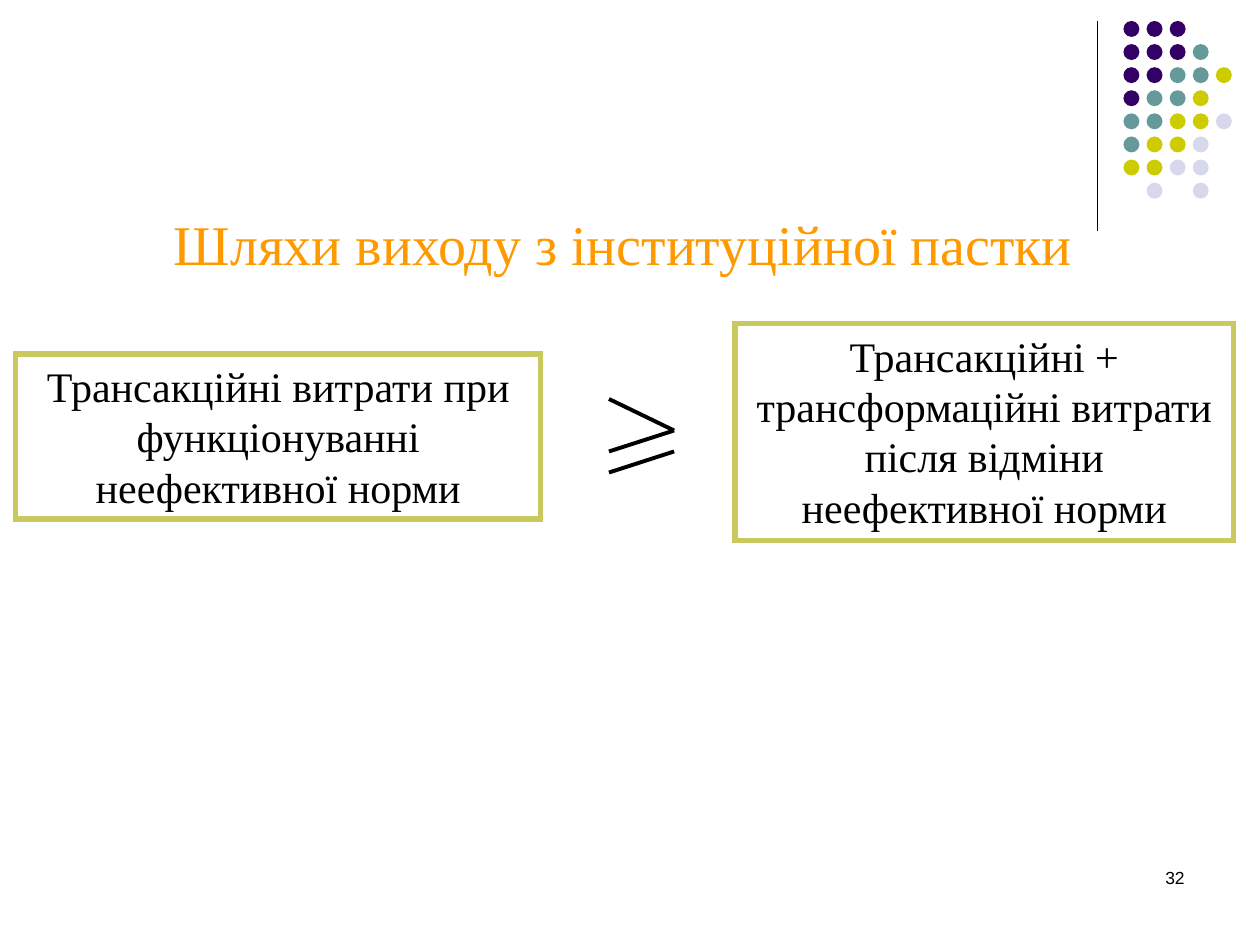
from lxml.etree import SubElement
from pptx import Presentation
from pptx.dml.color import RGBColor
from pptx.enum.shapes import MSO_CONNECTOR, MSO_SHAPE
from pptx.enum.text import MSO_ANCHOR, PP_ALIGN
from pptx.oxml.ns import qn
from pptx.util import Inches, Pt

BLACK = RGBColor(0x00, 0x00, 0x00)
ORANGE = RGBColor(0xFF, 0x99, 0x00)
OLIVE = RGBColor(0xC9, 0xC9, 0x60)
PURPLE = RGBColor(0x33, 0x00, 0x66)
TEAL = RGBColor(0x66, 0x99, 0x99)
LIME = RGBColor(0xCC, 0xCC, 0x00)
LAVENDER = RGBColor(0xD8, 0xD8, 0xEC)

deck = Presentation()
deck.slide_width = Inches(10)
deck.slide_height = Inches(7.5)
page = deck.slides.add_slide(deck.slide_layouts[5])
column = deck.slide_width / 60
row = deck.slide_height / 45


def grid(*places):
    return [int(place * (row if index % 2 else column)) for index, place in enumerate(places)]


def write(frame, words, size, font, colour, alignment):
    frame.word_wrap = True
    para = frame.paragraphs[0]
    para.alignment = alignment
    span = para.add_run()
    span.text = words
    span.font.size = Pt(size)
    span.font.name = font
    span.font.color.rgb = colour


title = page.shapes.title
title.left, title.top, title.width, title.height = grid(2.45, 9.66, 54.48, 3.84)
title.text_frame.vertical_anchor = MSO_ANCHOR.MIDDLE
write(title.text_frame, "Шляхи виходу з інституційної пастки", 32,
      "Times New Roman", ORANGE, PP_ALIGN.CENTER)

dot_colours = {"P": PURPLE, "T": TEAL, "L": LIME, "V": LAVENDER}
dot_rows = ["PPP", "PPPT", "PPTTL", "PTTL", "TTLLV", "TLLV", "LLVV", ".V.V"]
dots = page.shapes.add_group_shape()
for down, letters in enumerate(dot_rows):
    for across, letter in enumerate(letters):
        if letter in dot_colours:
            place = grid(53.5 + 1.1 * across, 1 + 1.1 * down, 0.76, 0.76)
            dot = dots.shapes.add_shape(MSO_SHAPE.OVAL, *place)
            dot.shadow.inherit = False
            dot.fill.solid()
            dot.fill.fore_color.rgb = dot_colours[letter]
            dot.line.fill.background()

strokes = [
    ((52.25, 1, 52.25, 11), 0.75),
    ((29, 19, 32.1, 20.5), 2.25),
    ((32.1, 20.5, 29, 21.5), 2.25),
    ((32.1, 21.5, 29, 22.5), 2.25),
]
for ends, weight in strokes:
    stroke = page.shapes.add_connector(MSO_CONNECTOR.STRAIGHT, *grid(*ends))
    stroke.line.color.rgb = BLACK
    stroke.line.width = Pt(weight)
    SubElement(stroke._element.spPr, qn("a:effectLst"))

costs = [
    ((0.75, 16.86, 25, 7.86),
     "Трансакційні витрати при функціонуванні неефективної норми"),
    ((35, 15.42, 23.75, 10.32),
     "Трансакційні + трансформаційні витрати після відміни неефективної норми"),
]
for place, words in costs:
    box = page.shapes.add_shape(MSO_SHAPE.RECTANGLE, *grid(*place))
    box.shadow.inherit = False
    box.fill.background()
    box.line.color.rgb = OLIVE
    box.line.width = Pt(3)
    SubElement(box._element.spPr.find(qn("a:ln")), qn("a:miter"), lim="800000")
    box.text_frame.vertical_anchor = MSO_ANCHOR.TOP
    write(box.text_frame, words, 24, "Times New Roman", BLACK, PP_ALIGN.CENTER)

number = page.shapes.add_textbox(*grid(43, 41, 14, 3))
write(number.text_frame, "32", 10, "Arial", BLACK, PP_ALIGN.RIGHT)

deck.save("out.pptx")
